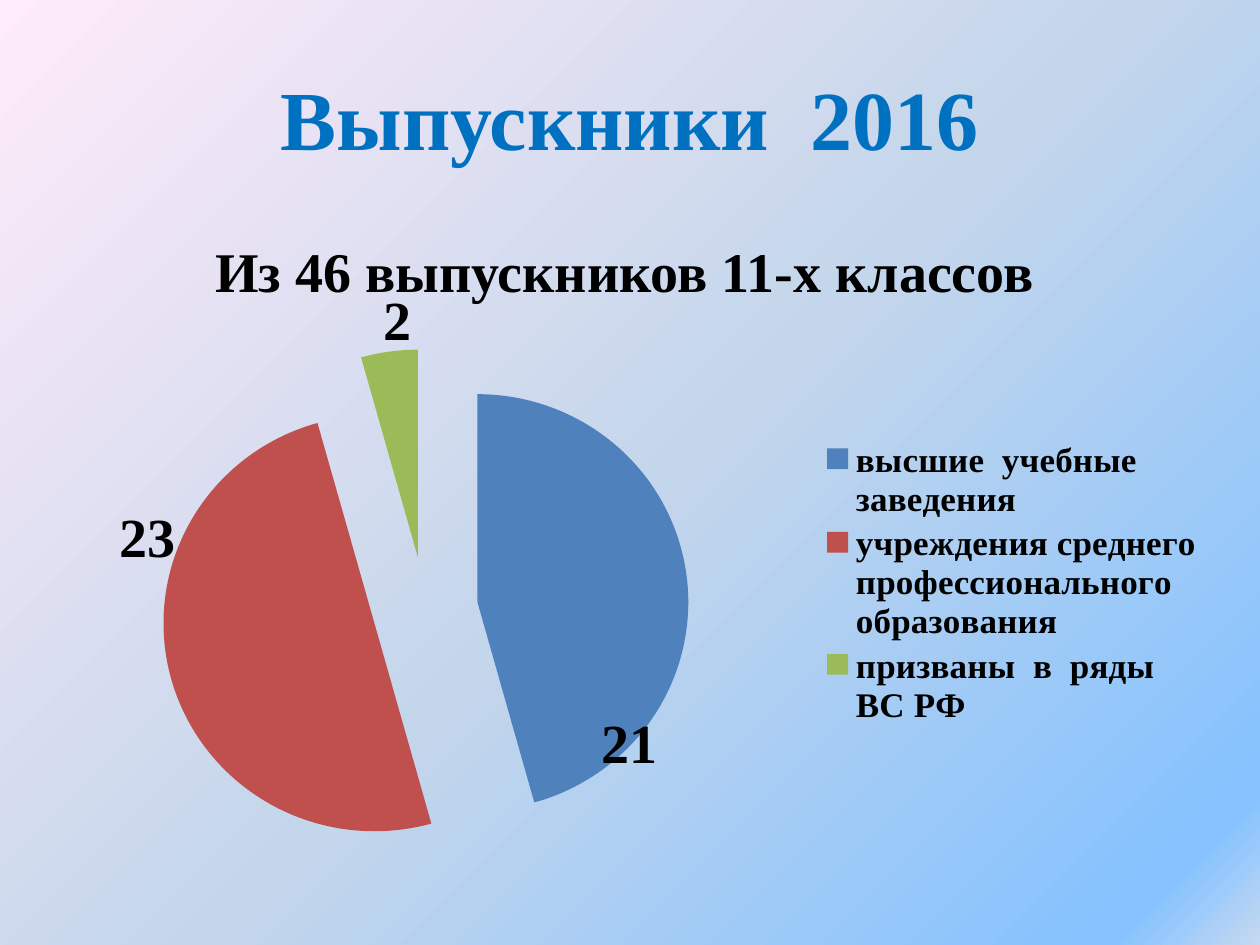
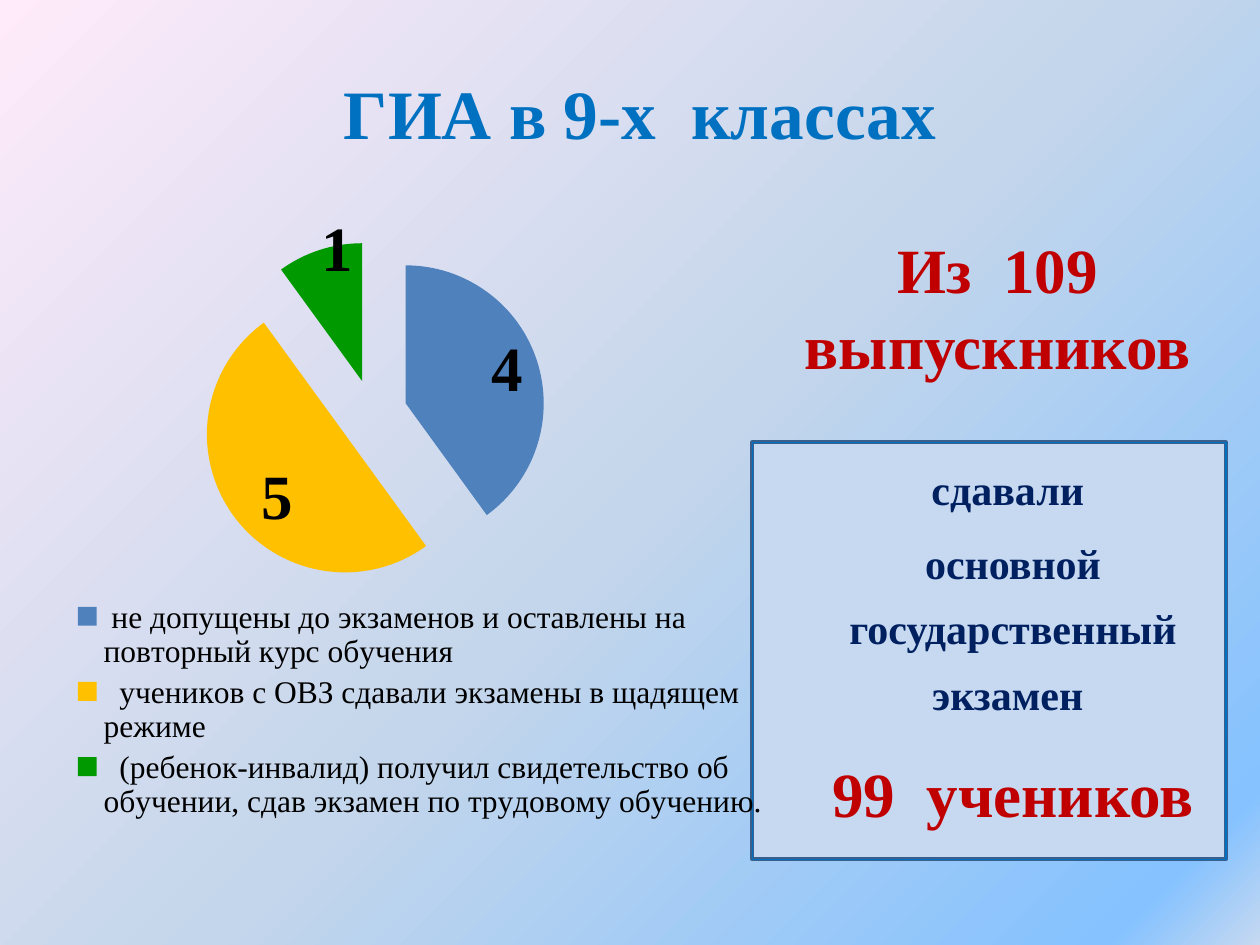
from lxml import etree
from pptx import Presentation
from pptx.chart.data import CategoryChartData
from pptx.dml.color import RGBColor
from pptx.enum import chart as charts, shapes, text
from pptx.oxml import parse_xml
from pptx.oxml.ns import qn
from pptx.util import Inches, Pt

COLORS = {
    "title": "0070C0", "ink": "000000", "navy": "002060", "red": "C00000",
    "panel": "C6D9F1", "panel_edge": "3A5F8C",
    "blue": "4F81BD", "brick": "C0504D", "olive": "9BBB59",
    "amber": "FFC000", "green": "009900",
}
GRADIENT = [(0, "C6D9F1"), (7, "85C2FF"), (48, "C4D6EB"), (100, "FFEBFA")]
FONT = "Times New Roman"
CENTER = text.PP_ALIGN.CENTER


def write(frame, content, size, color, align=CENTER, spacing=None, before=0,
          margin=0, indent=0, more=False):
    para = frame.add_paragraph() if more else frame.paragraphs[0]
    para.alignment = align
    para.space_before = Pt(before)
    if spacing:
        para.line_spacing = spacing
    properties = para._p.get_or_add_pPr()
    properties.set("marL", str(Inches(margin)))
    properties.set("indent", str(Inches(indent)))
    span = para.add_run()
    span.text = content
    span.font.name, span.font.size, span.font.bold = FONT, Pt(size), True
    span.font.color.rgb = RGBColor.from_string(COLORS[color])


def place(parent, index, **values):
    for old in parent.findall(qn("c:layout")):
        parent.remove(old)
    layout = etree.Element(qn("c:layout"))
    manual = etree.SubElement(layout, qn("c:manualLayout"))
    for name, value in values.items():
        etree.SubElement(manual, qn("c:" + name)).set("val", str(value))
    parent.insert(index, layout)


deck = Presentation()
deck.slide_width, deck.slide_height = Inches(10), Inches(7.5)

backdrop = deck.slide_master.background
backdrop.fill.solid()
stops = "".join(
    f'<a:gs pos="{percent * 1000}"><a:srgbClr val="{color}"/></a:gs>'
    for percent, color in GRADIENT)
gradient = parse_xml(
    '<a:gradFill xmlns:a="http://schemas.openxmlformats.org/drawingml/2006/main" '
    f'rotWithShape="1"><a:gsLst>{stops}</a:gsLst><a:path path="circle">'
    '<a:fillToRect l="100000" t="100000"/></a:path></a:gradFill>')
solid = next(deck.slide_master.element.iter(qn("p:bgPr"))).find(qn("a:solidFill"))
solid.getparent().replace(solid, gradient)

SLIDES = [
    dict(
        title="Выпускники  2016", title_at=(0.5, 0.3, 9, 1.25),
        title_size=48, title_spacing=None,
        chart_at=(0.59, 2.25, 9.13, 4.65),
        plot=dict(x=0, y=0.1, w=0.61, h=0.9),
        legend=dict(x=0.65, y=0.25, w=0.33, h=0.51),
        legend_side=charts.XL_LEGEND_POSITION.RIGHT,
        legend_size=20, legend_bold=True, leader_lines=True,
        label_size=32, label_side=charts.XL_LABEL_POSITION.OUTSIDE_END,
        slices=[
            ("высшие  учебные заведения", 21, "blue", (-0.08, 0.35)),
            ("учреждения среднего профессионального образования", 23, "brick",
             (0.01, -0.3)),
            ("призваны  в  ряды ВС РФ", 2, "olive", (0.02, 0.01)),
        ]),
    dict(
        title="ГИА в 9-х  классах", title_at=(2.09, 0.29, 5.98, 0.87),
        title_size=39.6, title_spacing=1.5,
        chart_at=(0.43, 1.47, 5.75, 5.59),
        plot=dict(x=0.02, y=0.08, w=0.84, h=0.49),
        legend=dict(x=0.02, y=0.58, w=0.97, h=0.33),
        legend_side=charts.XL_LEGEND_POSITION.BOTTOM,
        legend_size=18, legend_bold=False, leader_lines=False,
        label_size=36, label_side=charts.XL_LABEL_POSITION.INSIDE_END,
        slices=[
            (" не допущены до экзаменов и оставлены на повторный курс обучения ",
             4, "blue", (-0.01, -0.04)),
            ("  учеников с ОВЗ сдавали экзамены в щадящем режиме",
             5, "amber", (0.03, 0.03)),
            ("  (ребенок-инвалид) получил свидетельство об обучении, "
             "сдав экзамен по трудовому обучению.", 1, "green", (0, -0.06)),
        ]),
]

pages = [deck.slides.add_slide(deck.slide_layouts[5]) for content in SLIDES]
graduates, exams = pages

box = graduates.shapes.add_textbox(Inches(0.5), Inches(1.75), Inches(9), Inches(0.8))
box.text_frame.word_wrap = True
write(box.text_frame, "Из 46 выпускников 11-х классов ", 32, "ink",
      align=text.PP_ALIGN.JUSTIFY, spacing=1.15, before=6.4, indent=1.11)

for edge, weight in [("panel_edge", 2), ("title", 0.75)]:
    panel = exams.shapes.add_shape(
        shapes.MSO_SHAPE.RECTANGLE, *map(Inches, (5.97, 3.51, 3.76, 3.31)))
    panel.shadow.inherit = False
    panel.line.color.rgb = RGBColor.from_string(COLORS[edge])
    panel.line.width = Pt(weight)
    if edge == "panel_edge":
        panel.fill.solid()
        panel.fill.fore_color.rgb = RGBColor.from_string(COLORS["panel"])
    else:
        panel.fill.background()

panel.text_frame.word_wrap = True
panel.text_frame.vertical_anchor = text.MSO_ANCHOR.TOP
for row, (line, size, color) in enumerate([
        ("сдавали ", 24, "navy"),
        ("основной государственный экзамен ", 24, "navy"),
        ("99  учеников", 36, "red")]):
    write(panel.text_frame, line, size, color, spacing=1.3, before=size / 5,
          margin=0.38, more=row > 0)

for page, content in zip(pages, SLIDES):
    title = page.shapes.title
    title.left, title.top, title.width, title.height = map(Inches, content["title_at"])
    title.text_frame.auto_size = text.MSO_AUTO_SIZE.NONE
    title.text_frame.vertical_anchor = text.MSO_ANCHOR.MIDDLE
    write(title.text_frame, content["title"], content["title_size"], "title",
          spacing=content["title_spacing"])

    data = CategoryChartData()
    data.categories = [name for name, *rest in content["slices"]]
    data.add_series("Series 1", [value for name, value, *rest in content["slices"]])
    chart = page.shapes.add_chart(
        charts.XL_CHART_TYPE.PIE, *map(Inches, content["chart_at"]), data).chart
    chart.has_title = False
    chart.font.name, chart.font.size = "Calibri", Pt(10)
    chart.font.color.rgb = RGBColor.from_string(COLORS["ink"])
    chart.plots[0].vary_by_categories = True

    chart.has_legend = True
    legend = chart.legend
    legend.position = content["legend_side"]
    legend.include_in_layout = False
    root = chart.element
    place(next(root.iter(qn("c:plotArea"))), 0, layoutTarget="inner",
          xMode="edge", yMode="edge", **content["plot"])
    place(next(root.iter(qn("c:legend"))), 1, xMode="edge", yMode="edge",
          **content["legend"])

    series = chart.plots[0].series[0]
    pie = next(root.iter(qn("c:ser")))
    explosion = etree.Element(qn("c:explosion"))
    explosion.set("val", "25")
    pie.find(qn("c:tx")).addnext(explosion)
    labels = series.data_labels
    labels.show_value = True
    labels.position = content["label_side"]
    fonts = [(labels.font, content["label_size"], True),
             (legend.font, content["legend_size"], content["legend_bold"])]
    for index, (name, value, color, offset) in enumerate(content["slices"]):
        point = series.points[index]
        point.format.fill.solid()
        point.format.fill.fore_color.rgb = RGBColor.from_string(COLORS[color])
        point.data_label.position = content["label_side"]
        fonts.append((point.data_label.font, content["label_size"], True))
    for font, size, bold in fonts:
        font.name, font.size, font.bold = FONT, Pt(size), bold
        font.color.rgb = RGBColor.from_string(COLORS["ink"])

    group = pie.find(qn("c:dLbls"))
    for label, (name, value, color, (x, y)) in zip(
            group.findall(qn("c:dLbl")), content["slices"]):
        place(label, 1, x=x, y=y)
    leader = group.find(qn("c:showLeaderLines"))
    if leader is None:
        leader = etree.SubElement(group, qn("c:showLeaderLines"))
    leader.set("val", str(int(content["leader_lines"])))

total = exams.shapes.add_textbox(*map(Inches, (5.97, 1.78, 4.02, 1.31)))
total.text_frame.word_wrap = True
write(total.text_frame, "Из  109  выпускников ", 36, "red")

deck.save("out.pptx")
